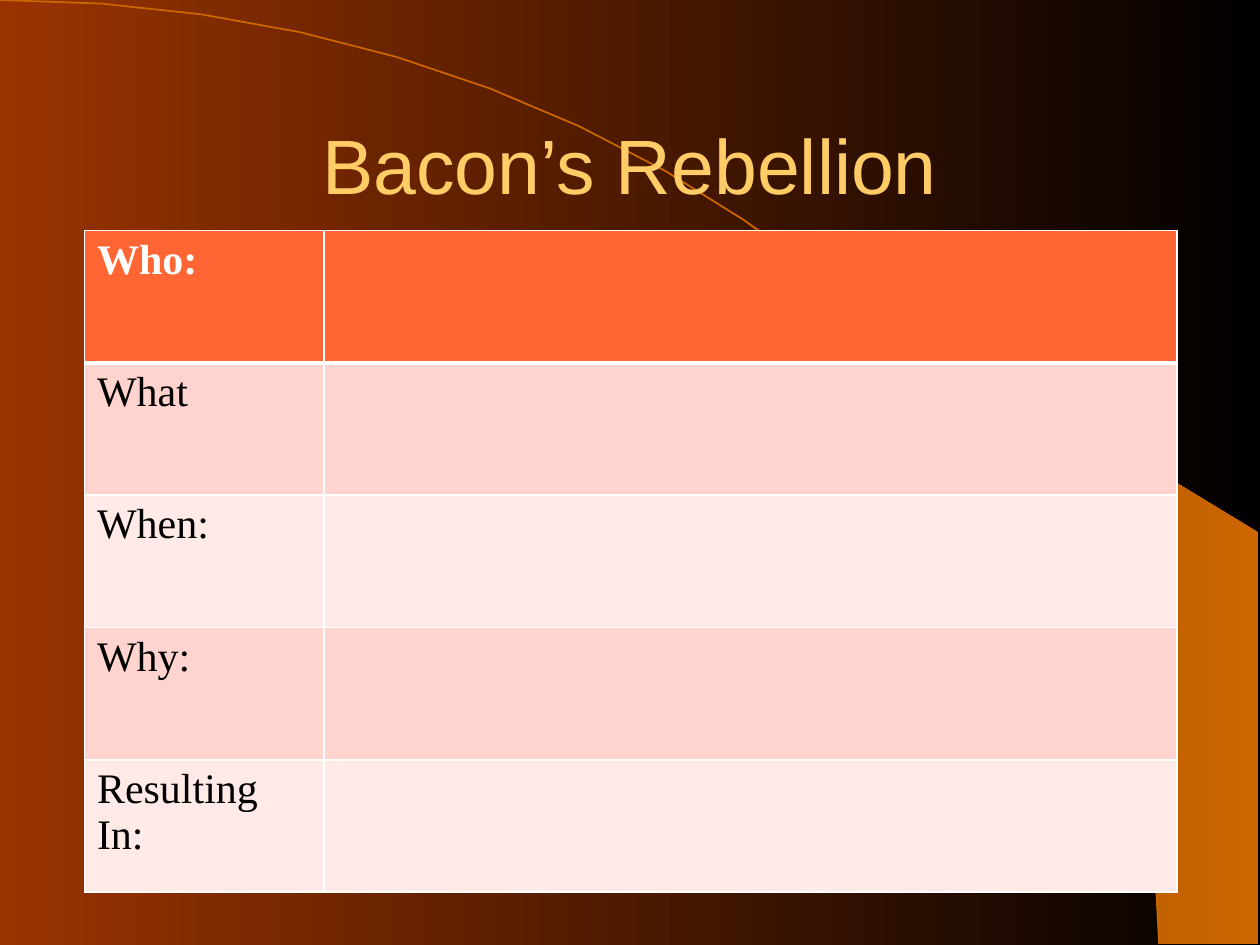
from math import cos, radians, sin

from lxml.etree import SubElement
from pptx import Presentation
from pptx.dml.color import RGBColor
from pptx.enum.text import MSO_ANCHOR, PP_ALIGN
from pptx.oxml.ns import qn
from pptx.util import Inches, Pt

LABELS = ["Who:", "What", "When:", "Why:", "Resulting In:"]
HEADER_FILL = "FF6633"
BAND_FILLS = ["FFEAE8", "FFD3CE"]
ARC_WIDTH, ARC_HEIGHT = 9.2, 7.49


def color(value):
    return RGBColor.from_string(value)


def set_gradient(fill, start, end):
    fill.gradient()
    fill.gradient_angle = 0
    for stop, value, position in zip(fill.gradient_stops, (start, end), (0, 1)):
        stop.color.rgb = color(value)
        stop.position = position


def set_font(font, name, size, value, bold=False):
    font.name = name
    font.size = Pt(size)
    font.bold = bold
    font.color.rgb = color(value)


def arc_points(left, top, width, height, first_angle):
    return [
        (left + width * sin(radians(angle)), top + height * (1 - cos(radians(angle))))
        for angle in range(first_angle, 91, 5)
    ]


def add_outline(page, points, close):
    corners = [(Inches(x), Inches(y)) for x, y in points]
    builder = page.shapes.build_freeform(*corners[0])
    builder.add_line_segments(corners[1:], close=close)
    shape = builder.convert_to_shape()
    shape.shadow.inherit = False
    return shape


def add_backdrop(page, left, top, width, height):
    set_gradient(page.background.fill, "993300", "000000")
    right, bottom = left + width, top + height
    edge = arc_points(left, top, ARC_WIDTH, ARC_HEIGHT, 40)
    wedge = add_outline(page, edge + [(right, bottom), (right, top + 4.23)], True)
    set_gradient(wedge.fill, "924900", "CC6600")
    wedge.line.fill.background()
    curve = add_outline(page, arc_points(left, top, ARC_WIDTH, ARC_HEIGHT, 0), False)
    curve.fill.background()
    curve.line.color.rgb = color("CC6600")
    curve.line.width = Pt(1)


def add_title(page, left, top, width, height):
    box = page.shapes.add_textbox(Inches(left), Inches(top), Inches(width), Inches(height))
    frame = box.text_frame
    frame.word_wrap = True
    frame.vertical_anchor = MSO_ANCHOR.MIDDLE
    para = frame.paragraphs[0]
    para.text = "Bacon’s Rebellion"
    para.alignment = PP_ALIGN.CENTER
    set_font(para.font, "Arial", 44, "FFCC66")


def set_borders(cell, top_width, bottom_width):
    properties = cell._tc.get_or_add_tcPr()
    widths = {"a:lnL": 1, "a:lnR": 1, "a:lnT": top_width, "a:lnB": bottom_width}
    for tag, width in widths.items():
        line = SubElement(properties, qn(tag), w=str(Pt(width)))
        SubElement(SubElement(line, qn("a:solidFill")), qn("a:srgbClr"), val="FFFFFF")


def add_fact_table(page, left, top, width, height):
    table = page.shapes.add_table(
        len(LABELS), 2, Inches(left), Inches(top), Inches(width), Inches(height)
    ).table
    table.columns[0].width = Inches(1.9)
    table.columns[1].width = Inches(width - 1.9)
    for index, label in enumerate(LABELS):
        header = index == 0
        for cell in table.rows[index].cells:
            set_borders(cell, 3 if index == 1 else 1, 3 if header else 1)
            cell.fill.solid()
            cell.fill.fore_color.rgb = color(HEADER_FILL if header else BAND_FILLS[index % 2])
        para = table.cell(index, 0).text_frame.paragraphs[0]
        para.text = label
        set_font(para.font, "Times New Roman", 24, "FFFFFF" if header else "000000", header)


def main():
    deck = Presentation()
    deck.slide_width = Inches(10)
    deck.slide_height = Inches(7.5)
    page = deck.slides.add_slide(deck.slide_layouts[6])
    add_backdrop(page, 0, 0, 9.99, 7.49)
    add_title(page, 0.75, 0.67, 8.5, 1.25)
    add_fact_table(page, 0.67, 1.83, 8.67, 5.25)
    deck.save("out.pptx")


if __name__ == "__main__":
    main()
